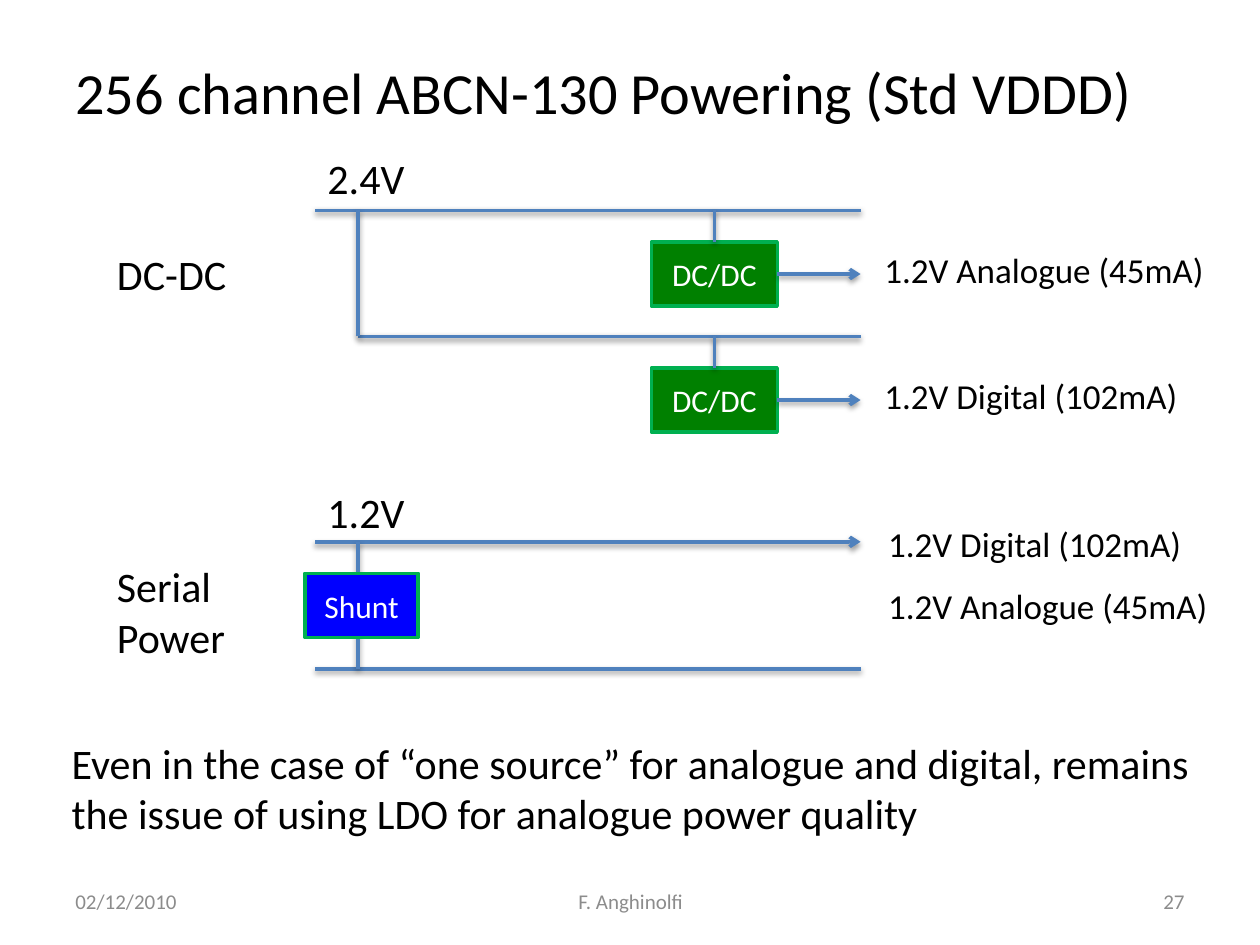
from lxml import etree
from pptx import Presentation
from pptx.dml.color import RGBColor
from pptx.enum.shapes import MSO_CONNECTOR, MSO_SHAPE
from pptx.enum.text import MSO_ANCHOR, PP_ALIGN
from pptx.oxml import parse_xml
from pptx.oxml.ns import nsdecls, qn
from pptx.util import Inches, Pt

LEFT, CENTER, RIGHT = PP_ALIGN.LEFT, PP_ALIGN.CENTER, PP_ALIGN.RIGHT
TOP, MIDDLE = MSO_ANCHOR.TOP, MSO_ANCHOR.MIDDLE
RECT, STRAIGHT = MSO_SHAPE.RECTANGLE, MSO_CONNECTOR.STRAIGHT

BLACK = RGBColor(0x00, 0x00, 0x00)
WHITE = RGBColor(0xFF, 0xFF, 0xFF)
GREY = RGBColor(0x8C, 0x8C, 0x8C)
WIRE = RGBColor(0x4F, 0x81, 0xBD)
GREEN = RGBColor(0x00, 0x80, 0x00)
BLUE = RGBColor(0x00, 0x00, 0xFF)
EDGE = RGBColor(0x00, 0xB0, 0x50)
FONT = "Calibri"

# Content: text, left, top, width, height, size, colour, alignment, anchor
FRAME_TEXTS = [
    ("256 channel ABCN-130 Powering (Std VDDD)", 0.5, 0.3, 9, 0.85, 33.3, BLACK, LEFT, MIDDLE),
    ("02/12/2010", 0.5, 6.95, 2.33, 0.4, 12, GREY, LEFT, MIDDLE),
    ("F. Anghinolfi", 3.42, 6.95, 3.17, 0.4, 12, GREY, CENTER, MIDDLE),
    ("27", 7.17, 6.95, 2.33, 0.4, 12, GREY, RIGHT, MIDDLE),
    ("Serial\nPower", 0.83, 4.4, 1.33, 0.91, 24, BLACK, LEFT, TOP),
    ("Even in the case of “one source” for analogue and digital, remains "
     "the issue of using LDO for analogue power quality",
     0.47, 5.8, 9.21, 0.91, 24, BLACK, LEFT, TOP),
]

# One-line labels: text, left, top, width, height, size
LABELS = [
    ("DC-DC", 0.83, 1.92, 1.08, 0.5, 24),
    ("2.4V", 2.5, 1.16, 0.82, 0.5, 24),
    ("1.2V", 2.5, 3.81, 0.82, 0.5, 24),
    ("1.2V Analogue (45mA)", 6.92, 1.92, 2.76, 0.44, 20),
    ("1.2V Digital (102mA)", 6.92, 2.92, 2.55, 0.44, 20),
    ("1.2V Digital (102mA)", 6.95, 4.1, 2.55, 0.44, 20),
    ("1.2V Analogue (45mA)", 6.95, 4.59, 2.76, 0.44, 20),
]

# Wiring geometry
RAIL_LEFT, RAIL_RIGHT, TAP_X = 2.5, 6.83, 2.84
DC_RAILS = [(RAIL_LEFT, 1.67), (TAP_X, 2.67)]  # rail start, rail height
SERIAL_TOP, SERIAL_BOTTOM = 4.3, 5.31
BOX_LEFT, BOX_W, BOX_H, BOX_DROP = 5.17, 1, 0.51, 0.25

prs = Presentation()
prs.slide_width, prs.slide_height = Inches(10), Inches(7.5)
s = prs.slides.add_slide(prs.slide_layouts[6])


def write(tf, text, size, color, align, anchor, wrap):
    tf.word_wrap = wrap
    tf.vertical_anchor = anchor
    for i, line in enumerate(text.split("\n")):
        p = tf.paragraphs[0] if i == 0 else tf.add_paragraph()
        p.alignment = align
        r = p.add_run()
        r.text = line
        r.font.name, r.font.size = FONT, Pt(size)
        r.font.color.rgb = color


def add_text(text, x, y, w, h, size, color=BLACK, align=LEFT, anchor=TOP, wrap=True):
    sp = s.shapes.add_textbox(Inches(x), Inches(y), Inches(w), Inches(h))
    write(sp.text_frame, text, size, color, align, anchor, wrap)


def add_box(text, x, y, w, fill):
    sp = s.shapes.add_shape(RECT, Inches(x), Inches(y), Inches(w), Inches(BOX_H))
    sp.shadow.inherit = False
    sp.fill.solid()
    sp.fill.fore_color.rgb = fill
    sp.line.color.rgb = EDGE
    sp.line.width = Pt(2)
    write(sp.text_frame, text, 18, WHITE, CENTER, MIDDLE, False)
    return sp


def add_wire(x1, y1, x2, y2, arrow=False):
    c = s.shapes.add_connector(STRAIGHT, Inches(x1), Inches(y1), Inches(x2), Inches(y2))
    c.line.color.rgb = WIRE
    c.line.width = Pt(2)
    if arrow:
        etree.SubElement(c.line._get_or_add_ln(), qn("a:tailEnd"), type="arrow")
    # Soft shadow straight below the wire
    c._element.spPr.append(parse_xml(
        f'<a:effectLst {nsdecls("a")}><a:outerShdw blurRad="{Pt(3.1)}" dist="{Pt(1.6)}" '
        'dir="5400000" rotWithShape="0"><a:srgbClr val="000000"><a:alpha val="38000"/>'
        '</a:srgbClr></a:outerShdw></a:effectLst>'))
    return c


# Title, footer and wrapped text
for item in FRAME_TEXTS:
    add_text(*item)

# DC-DC scheme: each rail feeds a converter with one output
for start, rail_y in DC_RAILS:
    box_y = rail_y + BOX_DROP
    mid_x, mid_y = BOX_LEFT + BOX_W / 2, box_y + BOX_H / 2
    box = add_box("DC/DC", BOX_LEFT, box_y, BOX_W, GREEN)
    add_wire(start, rail_y, RAIL_RIGHT, rail_y)
    add_wire(mid_x, box_y, mid_x, rail_y).begin_connect(box, 0)
    add_wire(BOX_LEFT + BOX_W, mid_y, RAIL_RIGHT, mid_y, arrow=True).begin_connect(box, 3)
add_wire(TAP_X, DC_RAILS[1][1], TAP_X, DC_RAILS[0][1])

# Serial scheme: shunt between the two rails
add_wire(RAIL_LEFT, SERIAL_TOP, RAIL_RIGHT, SERIAL_TOP, arrow=True)
add_wire(RAIL_LEFT, SERIAL_BOTTOM, RAIL_RIGHT, SERIAL_BOTTOM)
add_wire(TAP_X, SERIAL_BOTTOM, TAP_X, SERIAL_TOP)
add_box("Shunt", 2.42, SERIAL_TOP + BOX_DROP, 0.9, BLUE)

# Voltage and output labels
for item in LABELS:
    add_text(*item, wrap=False)

prs.save("out.pptx")
